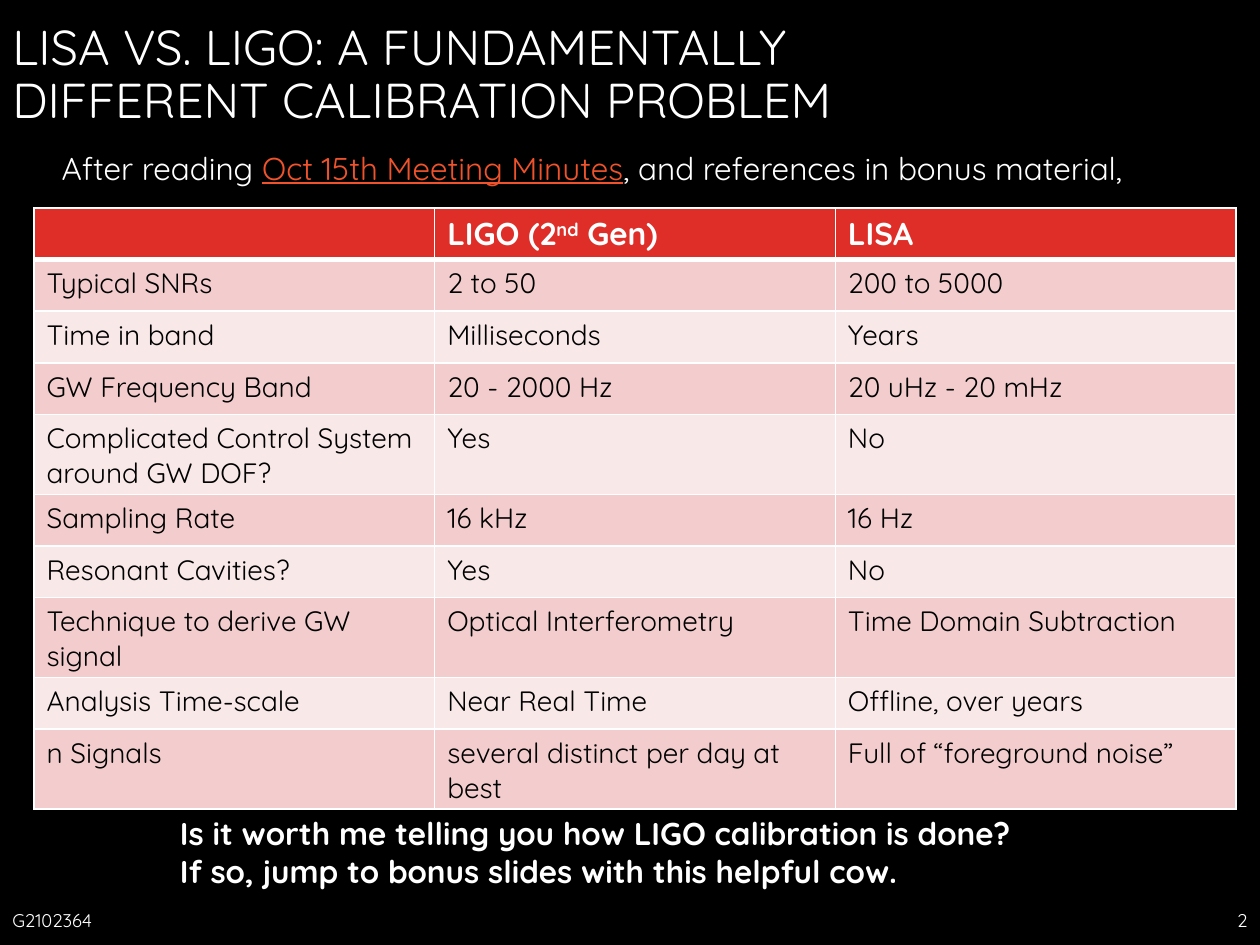
from dataclasses import dataclass

from lxml.etree import SubElement
from pptx import Presentation
from pptx.dml.color import RGBColor
from pptx.enum.text import MSO_ANCHOR as Anchor, PP_ALIGN as Align
from pptx.oxml.ns import qn
from pptx.util import Inches, Pt

FONT = "Quicksand"
WHITE, BLACK, RED, ORANGE = "FFFFFF", "000000", "DF2E28", "F0532B"
BANDS = ("F3CDCD", "F9E8E8")
ROW_HEIGHT, COLUMN_WIDTH = 0.41, 3.18


@dataclass
class Span:
    text: str
    color: str = WHITE
    underline: bool = False
    baseline: int = 0


@dataclass
class TextBlock:
    left: float
    top: float
    width: float
    height: float
    lines: list[list[Span]]
    size: float = 18
    bold: bool = False
    anchor: Anchor = Anchor.TOP
    align: Align = Align.LEFT
    line_spacing: float = 1.0


HEADER = [
    [],
    [Span("LIGO (2"), Span("nd", baseline=30000), Span(" Gen)")],
    [Span("LISA")],
]
COMPARISON = [
    ("Typical SNRs", "2 to 50", "200 to 5000"),
    ("Time in band", "Milliseconds", "Years"),
    ("GW Frequency Band", "20 - 2000 Hz", "20 uHz - 20 mHz"),
    ("Complicated Control System around GW DOF?", "Yes", "No"),
    ("Sampling Rate", "16 kHz", "16 Hz"),
    ("Resonant Cavities?", "Yes", "No"),
    ("Technique to derive GW signal", "Optical Interferometry", "Time Domain Subtraction"),
    ("Analysis Time-scale", "Near Real Time", "Offline, over years"),
    ("n Signals", "several distinct per day at best", "Full of “foreground noise”"),
]
TITLE = TextBlock(
    0, 0, 7.34, 1.21,
    [[Span("LISA VS. LIGO: A FUNDAMENTALLY DIFFERENT CALIBRATION PROBLEM")]],
    size=28, anchor=Anchor.MIDDLE, line_spacing=0.9,
)
FOOTERS_AND_NOTES = [
    TextBlock(0, 7.1, 2.34, 0.4, [[Span("G2102364")]], size=10.5, anchor=Anchor.MIDDLE),
    TextBlock(7.84, 7.1, 2.16, 0.4, [[Span("2")]], size=10.5,
              anchor=Anchor.MIDDLE, align=Align.RIGHT),
    TextBlock(1.33, 6.41, 6.88, 0.71, [
        [Span("Is it worth me telling you how LIGO calibration is done?")],
        [Span("If so, jump to bonus slides with this helpful cow.")],
    ], bold=True),
    TextBlock(0.39, 1.13, 9.31, 0.4, [[
        Span("After reading "),
        Span("Oct 15th Meeting Minutes", ORANGE, underline=True),
        Span(", and references in bonus material,"),
    ]]),
]


def rgb(color: str) -> RGBColor:
    return RGBColor.from_string(color)


def write_spans(para, spans: list[Span], size: float, bold: bool) -> None:
    para.font.size = Pt(size)
    for item in spans:
        span = para.add_run()
        span.text = item.text
        formats = {"name": FONT, "size": Pt(size), "bold": bold, "underline": item.underline}
        for name, value in formats.items():
            setattr(span.font, name, value)
        span.font.color.rgb = rgb(item.color)
        if item.baseline:
            span._r.get_or_add_rPr().set("baseline", str(item.baseline))


def add_text(page, block: TextBlock) -> None:
    box = page.shapes.add_textbox(*map(Inches, (block.left, block.top, block.width, block.height)))
    frame = box.text_frame
    frame.word_wrap = True
    frame.vertical_anchor = block.anchor
    for index, spans in enumerate(block.lines):
        para = frame.add_paragraph() if index else frame.paragraphs[0]
        para.alignment = block.align
        para.line_spacing = block.line_spacing
        write_spans(para, spans, block.size, block.bold)


def add_borders(cell, top: float, bottom: float) -> None:
    """Draw white cell edges; widths are in points."""
    properties = cell._tc.get_or_add_tcPr()
    for side, width in {"L": 1, "R": 1, "T": top, "B": bottom}.items():
        line = SubElement(properties, qn(f"a:ln{side}"), w=str(Pt(width)))
        fill = SubElement(line, qn("a:solidFill"))
        SubElement(fill, qn("a:srgbClr"), val=WHITE)


def add_comparison_table(page) -> None:
    rows = [HEADER] + [[[Span(text, BLACK)] for text in row] for row in COMPARISON]
    frame = page.shapes.add_table(
        len(rows), len(HEADER), Inches(0.27), Inches(1.65),
        Inches(COLUMN_WIDTH * len(HEADER)), Inches(ROW_HEIGHT * len(rows)),
    )
    table = frame.table
    for column in table.columns:
        column.width = Inches(COLUMN_WIDTH)
    for row_index, row in enumerate(rows):
        is_header = row_index == 0
        table.rows[row_index].height = Inches(ROW_HEIGHT)
        for column_index, spans in enumerate(row):
            cell = table.cell(row_index, column_index)
            add_borders(cell, top=3 if row_index == 1 else 1, bottom=3 if is_header else 1)
            cell.fill.solid()
            cell.fill.fore_color.rgb = rgb(RED if is_header else BANDS[(row_index - 1) % 2])
            write_spans(cell.text_frame.paragraphs[0], spans, 18 if is_header else 16, is_header)


def main() -> None:
    deck = Presentation()
    deck.slide_width, deck.slide_height = Inches(10), Inches(7.5)
    page = deck.slides.add_slide(deck.slide_layouts[6])
    page.background.fill.solid()
    page.background.fill.fore_color.rgb = rgb(BLACK)
    add_text(page, TITLE)
    add_comparison_table(page)
    for block in FOOTERS_AND_NOTES:
        add_text(page, block)
    deck.save("out.pptx")


if __name__ == "__main__":
    main()
